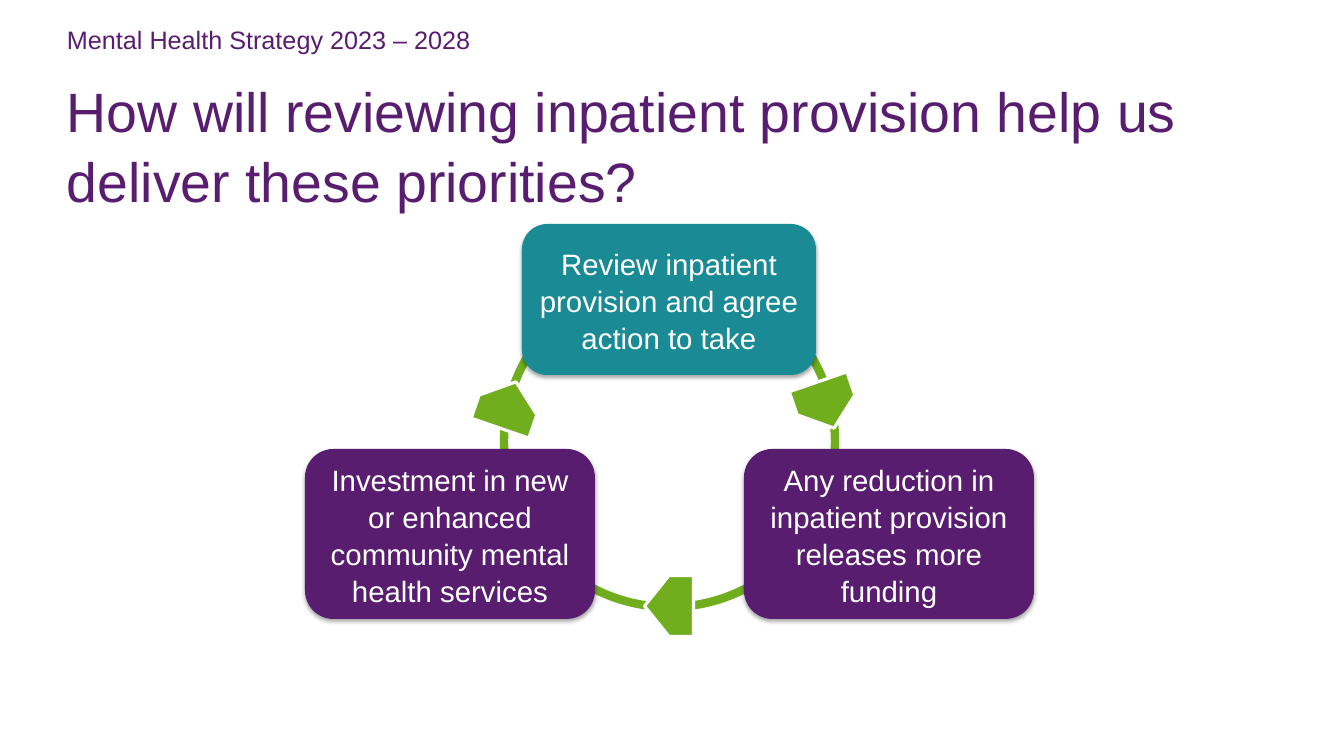
from pptx import Presentation
from pptx.dml.color import RGBColor
from pptx.enum.shapes import MSO_SHAPE
from pptx.enum.text import MSO_ANCHOR, PP_ALIGN
from pptx.oxml import parse_xml
from pptx.oxml.ns import nsdecls
from pptx.util import Pt

COLORS = {"purple": "591D70", "teal": "1A8B95", "green": "70AE1D", "white": "FFFFFF"}
STRATEGY = "Mental Health Strategy 2023 – 2028"
TITLE = "How will reviewing inpatient provision help us deliver these priorities?"
RING = (504, 276, 331, 331)
# text, fill, box in px
STEPS = [
    ("Review inpatient provision and agree action to take", "teal", (522, 224, 294, 151)),
    ("Any reduction in inpatient provision releases more funding", "purple", (744, 449, 290, 170)),
    ("Investment in new or enhanced community mental health services", "purple",
     (305, 449, 290, 170)),
]
# center x, center y, turn in degrees
ARROWS = [(669, 606, 180), (826, 405, 71), (508, 405, 289)]
ARROW_W, ARROW_H = 49, 61
PX = 914400 / 100.8


def emu(*lengths):
    return [round(n * PX) for n in lengths]


def color(name):
    return RGBColor.from_string(COLORS[name])


def write(shape, text, size, tint, align=PP_ALIGN.LEFT, spacing=1.0):
    frame = shape.text_frame
    frame.word_wrap = True
    frame.text = text
    para = frame.paragraphs[0]
    para.alignment = align
    para.line_spacing = spacing
    font = para.runs[0].font
    font.name, font.size = "Arial", Pt(size)
    font.color.rgb = color(tint)
    return frame


def add_shape(kind, box, fill=None, line=None, width=0):
    shape = slide.shapes.add_shape(kind, *emu(*box))
    shape.shadow.inherit = False
    if fill:
        shape.fill.solid()
        shape.fill.fore_color.rgb = color(fill)
    else:
        shape.fill.background()
    if line:
        shape.line.color.rgb = color(line)
        shape.line.width = Pt(width)
    else:
        shape.line.fill.background()
    return shape


def add_shadow(shape):
    """Put a soft black shadow just below the shape."""
    effects = shape._element.spPr.find(
        "{http://schemas.openxmlformats.org/drawingml/2006/main}effectLst")
    effects.append(parse_xml(
        f'<a:outerShdw {nsdecls("a")} blurRad="{Pt(3.1)}" dist="{Pt(1.8)}" dir="5400000"'
        ' rotWithShape="0"><a:srgbClr val="000000"><a:alpha val="35000"/></a:srgbClr>'
        '</a:outerShdw>'))


def add_heading(text, size, box, anchor, spacing):
    frame = write(slide.shapes.add_textbox(*emu(*box)), text, size, "purple", spacing=spacing)
    frame.margin_left = 0
    frame.vertical_anchor = anchor


deck = Presentation()
deck.slide_width, deck.slide_height = emu(1344, 756)
slide = deck.slides.add_slide(deck.slide_layouts[6])

add_heading(STRATEGY, 18, (67, 17, 992, 60), MSO_ANCHOR.TOP, 1.07)
add_heading(TITLE, 39.6, (67, 81, 1210, 126), MSO_ANCHOR.MIDDLE, 1.05)

add_shape(MSO_SHAPE.OVAL, RING, line="green", width=6)
for text, fill, box in STEPS:
    step = add_shape(MSO_SHAPE.ROUNDED_RECTANGLE, box, fill)
    add_shadow(step)
    write(step, text, 21, "white", PP_ALIGN.CENTER, 1.05).vertical_anchor = MSO_ANCHOR.MIDDLE

for x, y, turn in ARROWS:
    box = (x - ARROW_W / 2, y - ARROW_H / 2, ARROW_W, ARROW_H)
    add_shape(MSO_SHAPE.PENTAGON, box, "green", "white", 2.25).rotation = turn

deck.save("out.pptx")
